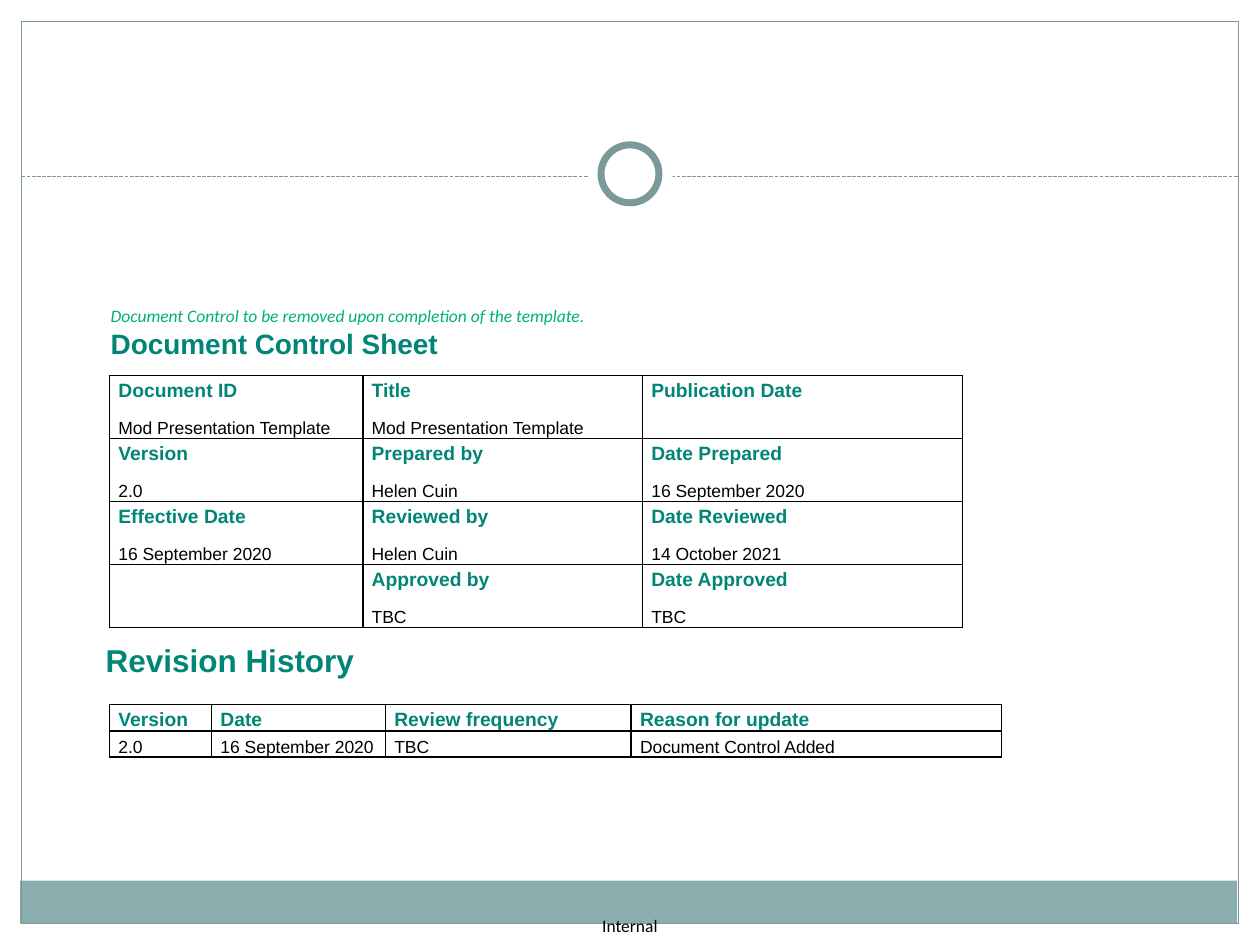
import pptx
import pptx.util
import pptx.dml.color
import pptx.enum.dml
import pptx.enum.shapes
import pptx.enum.text
import pptx.oxml.ns
from dataclasses import dataclass
from lxml import etree

SHAPES = pptx.enum.shapes.MSO_SHAPE
WIDTH, HEIGHT = pptx.util.Inches(10), pptx.util.Inches(7.5)
COLUMNS, ROWS = 100, 75  # layout grid


@dataclass(frozen=True)
class Theme:
    white: str = "FFFFFF"
    black: str = "000000"
    band: str = "8CADAE"
    outline: str = "7C999A"
    heading: str = "008576"
    hint: str = "00B274"
    sans: str = "Arial"
    note: str = "Calibri"
    body_size: int = 10
    label_size: int = 11
    sheet_size: int = 16
    history_size: int = 18
    thin: float = 0.75
    ring: float = 4
    border: float = 1


THEME = Theme()

CONTROL_ROWS = [
    [("Document ID", "Mod Presentation Template"), ("Title", "Mod Presentation Template"),
     ("Publication Date",)],
    [("Version", "2.0"), ("Prepared by", "Helen Cuin"), ("Date Prepared", "16 September 2020")],
    [("Effective Date", "16 September 2020"), ("Reviewed by", "Helen Cuin"),
     ("Date Reviewed", "14 October 2021")],
    [("",), ("Approved by", "TBC"), ("Date Approved", "TBC")],
]
HISTORY_ROWS = [
    [("Version",), ("Date",), ("Review frequency",), ("Reason for update",)],
    [("2.0",), ("16 September 2020",), ("TBC",), ("Document Control Added",)],
]


def col(n):
    return round(WIDTH * n / COLUMNS)


def row(n):
    return round(HEIGHT * n / ROWS)


def box(left, top, width, height):
    return col(left), row(top), col(width), row(height)


def rgb(value):
    return pptx.dml.color.RGBColor.from_string(value)


def style(p, size, color, font=THEME.sans, bold=False, italic=False):
    p.font.size = pptx.util.Pt(size)
    for r in p.runs:
        r.font.size, r.font.name = pptx.util.Pt(size), font
        r.font.bold, r.font.italic = bold, italic
        r.font.color.rgb = rgb(color)


def add_shape(s, kind, place, fill=None, line=None, weight=THEME.thin):
    sp = s.shapes.add_shape(kind, *box(*place))
    sp.shadow.inherit = False
    if fill:
        sp.fill.solid()
        sp.fill.fore_color.rgb = rgb(fill)
    else:
        sp.fill.background()
    if line:
        sp.line.color.rgb = rgb(line)
        sp.line.width = pptx.util.Pt(weight)
    else:
        sp.line.fill.background()


def add_divider(s, left, right, y):
    line = s.shapes.add_connector(pptx.enum.shapes.MSO_CONNECTOR.STRAIGHT,
                                  col(left), row(y), col(right), row(y))
    line.line.color.rgb = rgb(THEME.outline)
    line.line.width = pptx.util.Pt(THEME.thin)
    line.line.dash_style = pptx.enum.dml.MSO_LINE.SQUARE_DOT
    etree.SubElement(line._element.spPr, pptx.oxml.ns.qn("a:effectLst"))


def add_text(s, place, lines, wrap=True, inset=True, middle=False):
    """Each line is its text followed by a dict of style arguments."""
    tf = s.shapes.add_textbox(*box(*place)).text_frame
    tf.word_wrap = wrap
    if not inset:
        tf.margin_left = tf.margin_right = tf.margin_top = tf.margin_bottom = 0
    if middle:
        tf.vertical_anchor = pptx.enum.text.MSO_ANCHOR.MIDDLE
    tf.text = "\n".join(text for text, _ in lines)
    for p, (_, look) in zip(tf.paragraphs, lines):
        style(p, **look)


def add_borders(cell):
    tc_pr = cell._tc.get_or_add_tcPr()
    for side in ("lnL", "lnR", "lnT", "lnB"):
        ln = etree.SubElement(tc_pr, pptx.oxml.ns.qn(f"a:{side}"),
                              w=str(pptx.util.Pt(THEME.border)))
        fill = etree.SubElement(ln, pptx.oxml.ns.qn("a:solidFill"))
        etree.SubElement(fill, pptx.oxml.ns.qn("a:srgbClr"), val=THEME.black)


def fill_cell(cell, lines, is_label):
    add_borders(cell)
    cell.fill.background()
    cell.margin_left = cell.margin_right = col(0.7)
    cell.margin_top = cell.margin_bottom = 0
    cell.text_frame.text = "\n".join(lines)
    for i, p in enumerate(cell.text_frame.paragraphs):
        p.line_spacing = pptx.util.Pt(15)
        p.space_before = p.space_after = pptx.util.Pt(3)
        if is_label and i == 0:
            style(p, THEME.label_size, THEME.heading, bold=True)
        else:
            style(p, THEME.body_size, THEME.black)


def add_table(s, left, top, widths, row_height, rows, label_rows):
    """The first line of each cell in the first label_rows rows is a label."""
    place = box(left, top, sum(widths), row_height * len(rows))
    frame = s.shapes.add_table(len(rows), len(widths), *place)
    table = frame.table
    table.first_row = table.horz_banding = False
    for column, width in zip(table.columns, widths):
        column.width = col(width)
    for i, cells in enumerate(rows):
        table.rows[i].height = row(row_height)
        for j, lines in enumerate(cells):
            fill_cell(table.cell(i, j), lines, i < label_rows)


def main():
    prs = pptx.Presentation()
    prs.slide_width, prs.slide_height = WIDTH, HEIGHT
    s = prs.slides.add_slide(prs.slide_layouts[6])

    # Frame, footer band and divider with ring
    add_shape(s, SHAPES.RECTANGLE, (1.6, 69.9, 96.6, 3.4), THEME.band)
    add_shape(s, SHAPES.RECTANGLE, (1.7, 1.7, 96.6, 71.6), line=THEME.outline)
    add_divider(s, 1.7, 98.3, 14)
    add_shape(s, SHAPES.OVAL, (46.7, 10.5, 6.7, 6.7), THEME.white)
    add_shape(s, SHAPES.OVAL, (47.7, 11.5, 4.6, 4.6), THEME.white, THEME.outline, THEME.ring)

    # Classification
    add_text(s, (47.8, 72.6, 4.7, 1.7),
             [("Internal", dict(size=THEME.body_size, color=THEME.black, font=THEME.note))],
             wrap=False, inset=False)

    # Tables
    add_table(s, 8.7, 29.8, (20.1, 22.2, 25.4), 5, CONTROL_ROWS, label_rows=4)
    add_table(s, 8.7, 55.9, (8.1, 13.8, 19.5, 29.4), 2.1, HISTORY_ROWS, label_rows=1)

    # Headings
    add_text(s, (7.8, 23.7, 40.1, 5.4), [
        ("Document Control to be removed upon completion of the template.",
         dict(size=THEME.body_size, color=THEME.hint, font=THEME.note, italic=True)),
        ("Document Control Sheet",
         dict(size=THEME.sheet_size, color=THEME.heading, bold=True)),
    ], wrap=False, middle=True)
    add_text(s, (7.4, 50.4, 66.7, 4), [
        ("Revision History", dict(size=THEME.history_size, color=THEME.heading, bold=True)),
    ])

    prs.save("out.pptx")


if __name__ == "__main__":
    main()
